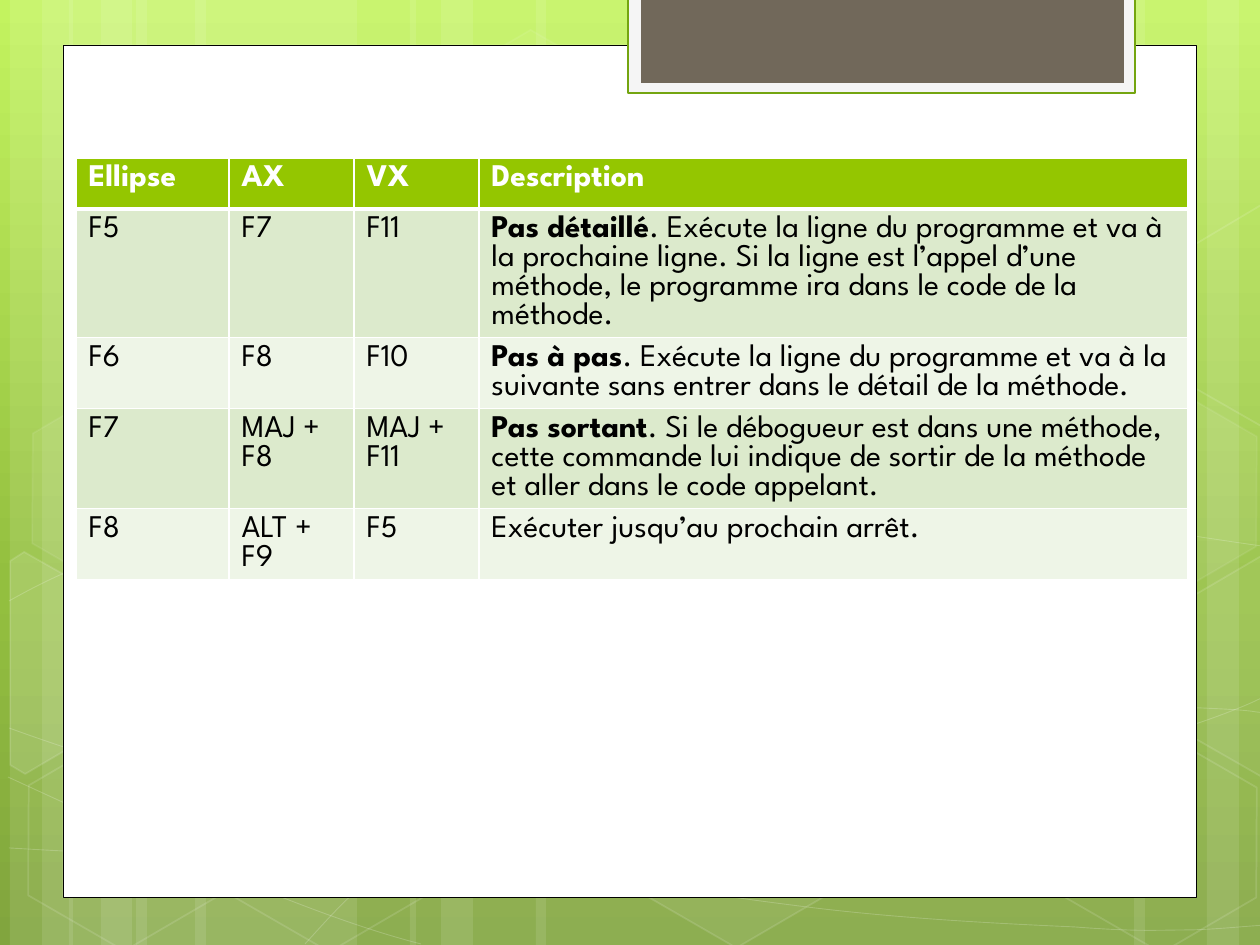
import copy
import math
import pptx
import pptx.util
import pptx.dml.color
import pptx.enum.shapes
import pptx.oxml
import pptx.oxml.ns

px = 914400 / 126
font = "League Spartan"
hues = {
    "white": "FFFFFF", "black": "000000", "head": "94C600",
    "dark": "DCEACC", "pale": "EEF5E7", "frame": "F5F5F5",
    "edge": "74A510", "tab": "71685A",
    "top": "C3F35F", "mid": "93BF3F", "low": "81A53E",
}
rgb = {name: pptx.dml.color.RGBColor.from_string(hue) for name, hue in hues.items()}
kinds = pptx.enum.shapes.MSO_SHAPE
qn = pptx.oxml.ns.qn
space = pptx.oxml.ns.nsdecls("a")


def style(shape, fill=None, fade=100, line=None, width=1, veil=100):
    shape.shadow.inherit = False
    for paint, hue, alpha in ((shape.fill, fill, fade), (shape.line.fill, line, veil)):
        if hue is None:
            paint.background()
            continue
        paint.solid()
        paint.fore_color.rgb = rgb[hue]
        if alpha < 100:
            root = shape.element.spPr
            if paint is not shape.fill:
                root = root.find(qn("a:ln"))
            node = root.find(qn("a:solidFill"))[0]
            node.append(pptx.oxml.parse_xml(f'<a:alpha {space} val="{alpha * 1000}"/>'))
    if line:
        shape.line.width = pptx.util.Pt(width)


def write(cell, text, bold=False, hue="black", size=18):
    run = cell.text_frame.paragraphs[0].add_run()
    run.text = text
    run.font.name = font
    run.font.size = pptx.util.Pt(size)
    run.font.bold = bold
    run.font.color.rgb = rgb[hue]


deck = pptx.Presentation()
deck.slide_width = round(1260 * px)
deck.slide_height = round(945 * px)
slide = deck.slides.add_slide(deck.slide_layouts[6])
shapes = slide.shapes

back = slide.background.fill
back.gradient()
back.gradient_angle = 270
stops = slide.element.find(".//" + qn("a:gsLst"))
stops.insert(1, copy.deepcopy(stops[0]))
for stop, hue, place in zip(back.gradient_stops, ("top", "mid", "low"), (0, 0.62, 1)):
    stop.color.rgb = rgb[hue]
    stop.position = place

bars = [(136, 221), (10, 63), (42, 105), (195, 221), (69, 63), (101, 105),
        (924, 221), (1207, 63), (1134, 105), (536, 388), (410, 63), (441, 105)]
for left, wide in bars:
    bar = shapes.add_shape(kinds.RECTANGLE, *[round(n * px) for n in (left, 0, wide, 945)])
    style(bar, "white", 10)

curves = [
    [(9, 848), (77, 852), (145, 856), (239, 854), (334, 853), (451, 851), (577, 838),
     (703, 825), (882, 801), (998, 777), (1113, 753), (1231, 716), (1269, 694)],
    [(9, 601), (45, 581), (82, 562), (152, 543), (224, 524), (326, 496), (437, 488),
     (549, 479), (685, 478), (824, 488), (963, 498), (1193, 537), (1269, 547)],
    [(8, 777), (160, 847), (311, 916), (421, 944)],
    [(9, 728), (48, 742), (88, 756), (161, 776), (234, 795), (344, 827), (450, 848),
     (554, 869), (687, 892), (791, 905), (896, 919), (1008, 924), (1075, 927),
     (1140, 932), (1158, 930), (1191, 930), (1223, 929), (1246, 926), (1269, 925)],
    [(305, 944), (328, 919), (350, 893), (381, 871), (411, 848), (454, 823), (489, 805),
     (524, 787), (546, 780), (592, 767), (638, 755), (722, 737), (766, 728),
     (811, 719), (818, 719), (857, 717), (896, 713), (959, 709), (1000, 708),
     (1045, 707), (1116, 708), (1116, 708), (1144, 708), (1173, 708), (1201, 708),
     (1223, 709), (1245, 710), (1256, 712), (1264, 713), (1260, 712), (1268, 713)],
]
for curve in curves:
    pen = shapes.build_freeform(*curve[0], scale=px)
    pen.add_line_segments(curve[1:], close=False)
    wave = pen.convert_to_shape()
    route = wave.element.find(".//" + qn("a:path"))
    lines = route.findall(qn("a:lnTo"))
    for i in range(0, len(lines), 3):
        bend = pptx.oxml.parse_xml(f"<a:cubicBezTo {space}/>")
        for line in lines[i:i + 3]:
            bend.append(line[0])
            route.remove(line)
        route.append(bend)
    style(wave, line="white", width=0.5, veil=20)

cells = [(421, 45, 4, 8), (626, 742, 6, 12), (14, 745, 0, 12), (18, 393, 7, 8),
         (219, 746, 0, 12), (1051, 747, 0, 12), (1051, 396, 7, 8)]
for left, top, fade, veil in cells:
    comb = shapes.add_shape(kinds.HEXAGON, *[round(n * px) for n in (left, top, 220, 191)])
    comb.adjustments[0] = 0.285
    comb.rotation = 30
    style(comb, "white" if fade else None, fade, "white", 1, veil)

cuts = [
    (10, 45, 674, [(10, 561), (24, 552), (121, 607), (120, 718), (25, 774), (10, 765)]),
    (4, 1241, 655, [(1167, 611), (1261, 556), (1271, 562), (1271, 772), (1263, 777), (1167, 722)]),
    (0, 1241, 304, [(1167, 261), (1261, 205), (1272, 212), (1271, 422), (1263, 427), (1167, 372)]),
]
cos, sin = math.cos(math.pi / 6), math.sin(math.pi / 6)
for fade, midx, midy, dots in cuts:
    flat = [(midx + (x - midx) * cos + (y - midy) * sin,
             midy - (x - midx) * sin + (y - midy) * cos) for x, y in dots]
    pen = shapes.build_freeform(*[round(n * px) for n in flat[0]])
    pen.add_line_segments([[round(n * px) for n in dot] for dot in flat[1:]])
    cut = pen.convert_to_shape()
    cut.rotation = 30
    style(cut, "white" if fade else None, fade, "white", 1, 12)

panels = [((63, 45, 1134, 853), "white", "black", 0.5),
          ((628, -3, 507, 96), "frame", "edge", 1.25),
          ((641, -2, 483, 85), "tab", None, 0)]
for box, fill, line, width in panels:
    panel = shapes.add_shape(kinds.RECTANGLE, *[round(n * px) for n in box])
    style(panel, fill, line=line, width=width)

rows = [
    ("Ellipse", "AX", "VX", "Description", ""),
    ("F5", "F7", "F11", "Pas détaillé",
     ". Exécute la ligne du programme et va à la prochaine ligne. Si la ligne est "
     "l’appel d’une méthode, le programme ira dans le code de la méthode."),
    ("F6", "F8", "F10", "Pas à pas",
     ". Exécute la ligne du programme et va à la suivante sans entrer dans le détail "
     "de la méthode."),
    ("F7", "MAJ + F8", "MAJ + F11", "Pas sortant",
     ". Si le débogueur est dans une méthode, cette commande lui indique de sortir "
     "de la méthode et aller dans le code appelant."),
    ("F8", "ALT + F9", "F5", "", "Exécuter jusqu’au prochain arrêt."),
]
wides = (153, 125, 125, 709)
highs = (51, 128, 71, 100, 71)
box = [round(n * px) for n in (76, 158, sum(wides), sum(highs))]
grid = shapes.add_table(len(rows), len(wides), *box).table
for col, wide in zip(grid.columns, wides):
    col.width = round(wide * px)
for r, (row, high) in enumerate(zip(rows, highs)):
    grid.rows[r].height = round(high * px)
    for c in range(len(wides)):
        cell = grid.cell(r, c)
        rule = cell._tc.get_or_add_tcPr()
        for side in "LRTB":
            thick = 3 if (r, side) in ((0, "B"), (1, "T")) else 1
            rule.append(pptx.oxml.parse_xml(
                f'<a:ln{side} {space} w="{thick * 12700}"><a:solidFill>'
                f'<a:srgbClr val="{hues["white"]}"/></a:solidFill></a:ln{side}>'))
        cell.fill.solid()
        cell.fill.fore_color.rgb = rgb["head" if r == 0 else "dark" if r % 2 else "pale"]
        if row[c]:
            write(cell, row[c], bold=r == 0 or c == 3, hue="black" if r else "white")
        if c == 3 and row[4]:
            write(cell, row[4])

deck.save("out.pptx")
